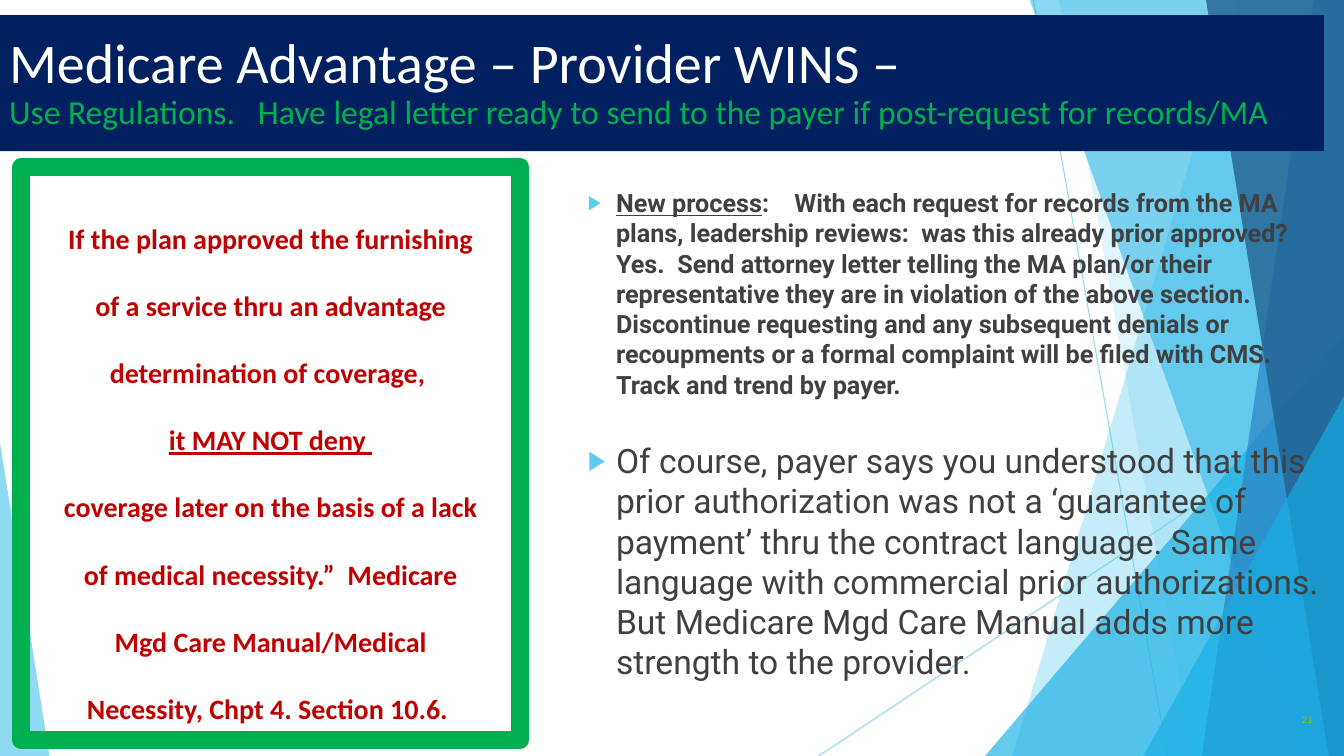
from dataclasses import dataclass

from lxml import etree
from pptx import Presentation
from pptx.dml.color import RGBColor
from pptx.enum.shapes import MSO_CONNECTOR, MSO_SHAPE
from pptx.enum.text import MSO_ANCHOR, MSO_AUTO_SIZE, PP_ALIGN
from pptx.oxml.ns import qn
from pptx.util import Inches, Pt

RECT, TRIANGLE = MSO_SHAPE.RECTANGLE, MSO_SHAPE.ISOSCELES_TRIANGLE
STRAIGHT = MSO_CONNECTOR.STRAIGHT
LEFT, CENTER, RIGHT = PP_ALIGN.LEFT, PP_ALIGN.CENTER, PP_ALIGN.RIGHT
TOP, MIDDLE = MSO_ANCHOR.TOP, MSO_ANCHOR.MIDDLE
NO_FIT = MSO_AUTO_SIZE.NONE


@dataclass(frozen=True)
class Theme:
    sky: str = "5FCBEF"
    cyan: str = "17B0E4"
    blue: str = "2E83C3"
    deep: str = "226292"
    navy: str = "002060"
    green: str = "00B050"
    lime: str = "90C226"
    red: str = "C00000"
    gray: str = "404040"
    white: str = "FFFFFF"
    heading: str = "Calibri"
    body: str = "Roboto"
    number: str = "Arial"
    title_size: float = 40
    subtitle_size: float = 24
    quote_size: float = 20
    process_size: float = 18
    reply_size: float = 24
    number_size: float = 6.8


T = Theme()
W, H = 13.33, 7.5

TITLE = "Medicare Advantage – Provider WINS – "
SUBTITLE = ("Use Regulations.   Have legal letter ready to send to the payer "
            "if post-request for records/MA")
QUOTE = [
    ("If the plan approved the furnishing of a service thru an advantage "
     "determination of coverage, ", False),
    ("it MAY NOT deny ", True),
    ("coverage later on the basis of a lack of medical necessity.”  Medicare "
     "Mgd Care Manual/Medical Necessity, Chpt 4. Section 10.6. ", False),
]
BULLETS = [
    (T.process_size, True, 0, [
        ("New process", True),
        (":    With each request for records from the MA plans, leadership "
         "reviews:  was this already prior approved? Yes.  Send attorney letter "
         "telling the MA plan/or their representative they are in violation of "
         "the above section. Discontinue requesting and any subsequent denials "
         "or recoupments or a formal complaint will be filed with CMS.  Track "
         "and trend by payer.", False)]),
    (T.reply_size, False, 29, [
        ("Of course, payer says you understood that this prior authorization "
         "was not a ‘guarantee of payment’ thru the contract language. Same "
         "language with commercial prior authorizations.  But Medicare Mgd Care "
         "Manual adds more strength to the provider.", False)]),
]
PAGE = "21"

RAYS = [((10.25, 0), (11.58, H)), ((W, 4.03), (8.12, H))]
BANDS_BACK = [(12.28, 10.04, T.sky, 36), (10.5, 11.83, T.sky, 20)]
BANDS_FRONT = [(10.21, 12.91, T.cyan, 50), (13.03, 11.92, T.blue, 70),
               (11.96, 13.18, T.deep, 80)]
WEDGE_WIDE = (9.77, 3.33, 3.56, 1, T.cyan, 66)
WEDGE_RIGHT = (11.34, 3.93, 1.99, 1, T.cyan, 66)
WEDGE_LEFT = (0, 4.39, 0.49, 0, T.sky, 70)


def rgb(color):
    return RGBColor.from_string(color)


def set_alpha(holder, percent):
    color = next(holder.iter(qn("a:srgbClr")))
    etree.SubElement(color, qn("a:alpha")).set("val", str(percent * 1000))


def paint(sp, color, percent):
    sp.shadow.inherit = False
    sp.fill.solid()
    sp.fill.fore_color.rgb = rgb(color)
    sp.line.fill.background()
    set_alpha(sp.fill._xPr, percent)


def ray(start, end):
    sp = shapes.add_connector(STRAIGHT, *map(Inches, start + end))
    sp.line.color.rgb = rgb(T.sky)
    sp.line.width = Pt(0.75)
    set_alpha(sp.line._ln, 70)
    etree.SubElement(sp._element.spPr, qn("a:effectLst"))


def band(top_x, bottom_x, color, percent):
    corners = [(top_x, -0.01), (W, -0.01), (W, H), (bottom_x, H)]
    points = [(Inches(x), Inches(y)) for x, y in corners]
    outline = shapes.build_freeform(*points[0], scale=1.0)
    outline.add_line_segments(points[1:], close=True)
    paint(outline.convert_to_shape(), color, percent)


def wedge(left, top, width, apex, color, percent):
    sp = shapes.add_shape(TRIANGLE, *map(Inches, (left, top, width, H - top)))
    sp.adjustments[0] = apex
    paint(sp, color, percent)


def place(sp, left, top, width, height, anchor=TOP):
    sp.left, sp.top, sp.width, sp.height = map(Inches, (left, top, width, height))
    tf = sp.text_frame
    tf.word_wrap = True
    tf.auto_size = NO_FIT
    tf.vertical_anchor = anchor
    return tf


def paragraph(tf, index, align=LEFT, spacing=1.0, before=0):
    p = tf.add_paragraph() if index else tf.paragraphs[0]
    p.alignment = align
    p.line_spacing = spacing
    p.space_before = Pt(before)
    return p


def write(p, text, size, color, font, bold=False, underline=False):
    r = p.add_run()
    r.text = text
    r.font.size = Pt(size)
    r.font.name = font
    r.font.color.rgb = rgb(color)
    r.font.bold = bold
    r.font.underline = underline


def add_bullet(p):
    pPr = p._p.get_or_add_pPr()
    pPr.set("marL", str(Inches(0.28)))
    pPr.set("indent", str(-Inches(0.28)))
    color = etree.SubElement(pPr, qn("a:buClr"))
    etree.SubElement(color, qn("a:srgbClr")).set("val", T.sky)
    etree.SubElement(pPr, qn("a:buSzPct")).set("val", "80000")
    etree.SubElement(pPr, qn("a:buFont")).set("typeface", T.number)
    etree.SubElement(pPr, qn("a:buChar")).set("char", "▶")


prs = Presentation()
prs.slide_width, prs.slide_height = Inches(W), Inches(H)
slide = prs.slides.add_slide(prs.slide_layouts[1])
shapes = slide.shapes
title, body = shapes.title, slide.placeholders[1]

for ends in RAYS:
    ray(*ends)
for spec_row in BANDS_BACK:
    band(*spec_row)
wedge(*WEDGE_WIDE)
for spec_row in BANDS_FRONT:
    band(*spec_row)
wedge(*WEDGE_RIGHT)
wedge(*WEDGE_LEFT)

tf = place(shapes.add_textbox(0, 0, 0, 0), 10.12, 6.94, 3, 0.4, MIDDLE)
write(paragraph(tf, 0, RIGHT), PAGE, T.number_size, T.lime, T.number)

shapes._spTree.append(body._element)
tf = place(body, 5.73, 1.81, 7.6, 5.39)
for i, (size, bold, before, parts) in enumerate(BULLETS):
    p = paragraph(tf, i, before=before)
    add_bullet(p)
    for text, underline in parts:
        write(p, text, size, T.gray, T.body, bold, underline)

frame = shapes.add_shape(RECT, *map(Inches, (0.21, 1.66, 4.95, 5.68)))
frame.shadow.inherit = False
frame.fill.background()
frame.line.color.rgb = rgb(T.green)
frame.line.width = Pt(13)

tf = place(shapes.add_textbox(0, 0, 0, 0), 0.45, 1.81, 4.47, 5.39)
for i, (text, underline) in enumerate(QUOTE):
    p = paragraph(tf, i, CENTER, 2.0)
    write(p, text, T.quote_size, T.red, T.heading, True, underline)

shapes._spTree.append(title._element)
tf = place(title, -0.01, 0.15, 13.14, 1.35, MIDDLE)
title.fill.solid()
title.fill.fore_color.rgb = rgb(T.navy)
p = paragraph(tf, 0, spacing=0.9)
write(p, TITLE, T.title_size, T.white, T.heading)
p.add_line_break()
write(p, SUBTITLE, T.subtitle_size, T.green, T.heading)

prs.save("out.pptx")
